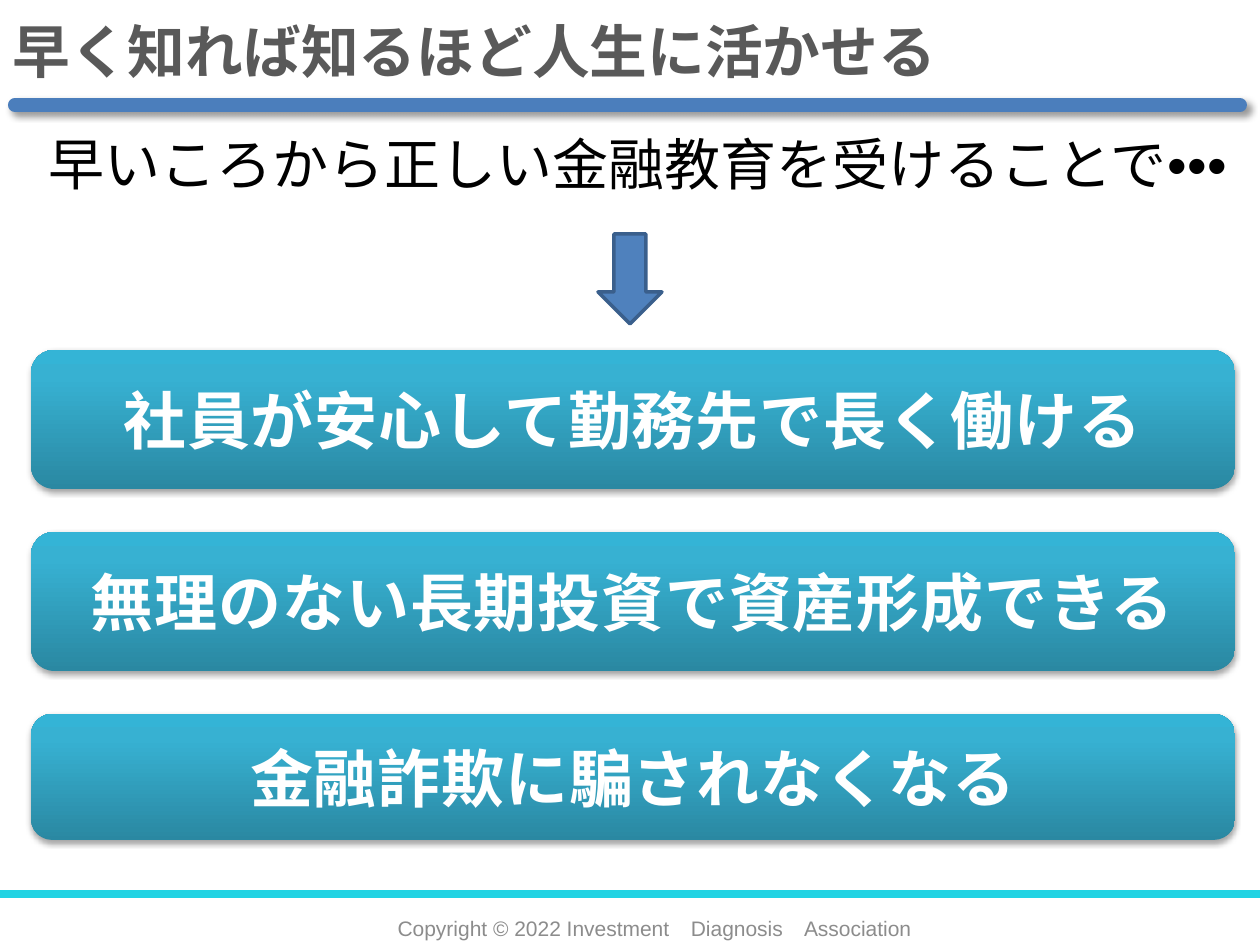
from lxml import etree
from pptx import Presentation
from pptx.dml.color import RGBColor
from pptx.enum.shapes import MSO_CONNECTOR as CONN, MSO_SHAPE as SHAPE
from pptx.enum.text import MSO_ANCHOR as ANCHOR, PP_ALIGN as ALIGN
from pptx.oxml import parse_xml
from pptx.oxml.ns import nsdecls, qn
from pptx.util import Pt

SCALE = 914400 / 126
THEME = {
    "title": {"size": 33, "name": "Noto Sans CJK JP", "color": "595959", "bold": True},
    "lead": {"size": 32, "name": "Arial", "color": "000000", "bold": False},
    "card": {"size": 36, "name": "Roboto", "color": "FFFFFF", "bold": True},
    "footer": {"size": 12, "name": "Arial", "color": "8C8C8C", "bold": False},
    "rule": {"color": "4B7EBC", "width": 8},
    "footer_rule": {"color": "22D3E3", "width": 5},
    "arrow": {"fill": "4F81BD", "color": "3A5F8C", "width": 2},
    "gradient": ((0, "2A88A2"), (80, "37B1D2"), (100, "34B4D6")),
    "card_shadow": {"alpha": 35, "blur": 3.1, "dist": 1.8, "angle": 90},
    "rule_shadow": {"alpha": 40, "blur": 4, "dist": 3, "angle": 45},
}


def px(*values):
    return [round(v * SCALE) for v in values]


def rgb(value):
    return RGBColor.from_string(value)


def style_line(line, color, width):
    line.color.rgb = rgb(color)
    line.width = Pt(width)


def set_effect(sp, shadow=None):
    spPr = sp._element.spPr
    for old in spPr.findall(qn("a:effectLst")):
        spPr.remove(old)
    effect = etree.SubElement(spPr, qn("a:effectLst"))
    if shadow:
        effect.append(parse_xml(
            f'<a:outerShdw {nsdecls("a")} blurRad="{Pt(shadow["blur"])}" '
            f'dist="{Pt(shadow["dist"])}" dir="{shadow["angle"] * 60000}" rotWithShape="0">'
            f'<a:srgbClr val="000000"><a:alpha val="{shadow["alpha"] * 1000}"/></a:srgbClr>'
            '</a:outerShdw>'))


def fill_gradient(sp):
    sp.fill.background()
    spPr = sp._element.spPr
    stops = "".join(f'<a:gs pos="{pos * 1000}"><a:srgbClr val="{color}"/></a:gs>'
                    for pos, color in THEME["gradient"])
    spPr.replace(spPr.find(qn("a:noFill")), parse_xml(
        f'<a:gradFill {nsdecls("a")} rotWithShape="1"><a:gsLst>{stops}</a:gsLst>'
        '<a:lin ang="16200000" scaled="0"/></a:gradFill>'))


def write(sp, text, style, align=ALIGN.CENTER, anchor=ANCHOR.MIDDLE, spacing=None):
    tf = sp.text_frame
    tf.word_wrap, tf.vertical_anchor = True, anchor
    p = tf.paragraphs[0]
    p.alignment, p.line_spacing = align, spacing
    r = p.add_run()
    r.text = text
    fmt = THEME[style]
    for key, value in {"size": Pt(fmt["size"]), "name": fmt["name"], "bold": fmt["bold"]}.items():
        setattr(r.font, key, value)
    r.font.color.rgb = rgb(fmt["color"])
    etree.SubElement(r._r.rPr, qn("a:ea")).set("typeface", fmt["name"])
    return r


def add_rule(s, x, y, w, style):
    line = s.shapes.add_connector(CONN.STRAIGHT, *px(x, y, x + w, y))
    style_line(line.line, **THEME[style])
    return line


def add_header(s, x, y, w, h, text):
    box = s.shapes.add_textbox(*px(x, y, w, h))
    write(box, text, "title", align=ALIGN.LEFT, spacing=0.9)
    rule = add_rule(s, x + 15, y + 129, 1225, "rule")
    rule.line._ln.set("cap", "rnd")
    set_effect(rule, THEME["rule_shadow"])


def add_lead(s, x, y, w, h, text):
    box = s.shapes.add_textbox(*px(x, y, w, h))
    write(box, text, "lead", anchor=ANCHOR.TOP)


def add_arrow(s, x, y, w, h):
    sp = s.shapes.add_shape(SHAPE.DOWN_ARROW, *px(x, y, w, h))
    fmt = THEME["arrow"]
    sp.shadow.inherit = False
    sp.fill.solid()
    sp.fill.fore_color.rgb = rgb(fmt["fill"])
    style_line(sp.line, fmt["color"], fmt["width"])


def add_card(s, x, y, w, h, text):
    sp = s.shapes.add_shape(SHAPE.ROUNDED_RECTANGLE, *px(x, y, w, h))
    fill_gradient(sp)
    sp.line.fill.background()
    set_effect(sp, THEME["card_shadow"])
    write(sp, text, "card").font._element.set("spc", "50")


def add_cards(s, x, y, w, pitch, cards):
    for i, (h, text) in enumerate(cards):
        add_card(s, x, y + i * pitch, w, h, text)


def add_footer(s, x, y, w, h, text):
    set_effect(add_rule(s, x, y, w, "footer_rule"))
    box = s.shapes.add_textbox(*px(x + 322, y + 23, 665, h))
    write(box, text, "footer")


def main():
    prs = Presentation()
    prs.slide_width, prs.slide_height = px(1260, 945)
    s = prs.slides.add_slide(prs.slide_layouts[6])
    add_footer(s, 0, 894, 1260, 22, "Copyright © 2022 Investment　Diagnosis　Association")
    add_lead(s, 15, 123, 1245, 81, "早いころから正しい金融教育を受けることで•••")
    add_arrow(s, 598, 234, 64, 90)
    add_cards(s, 31, 350, 1204, 182, (
        (139, "社員が安心して勤務先で長く働ける"),
        (139, "無理のない長期投資で資産形成できる"),
        (126, "金融詐欺に騙されなくなる"),
    ))
    add_header(s, 0, -24, 1184, 158, "早く知れば知るほど人生に活かせる")
    prs.save("out.pptx")


if __name__ == "__main__":
    main()
